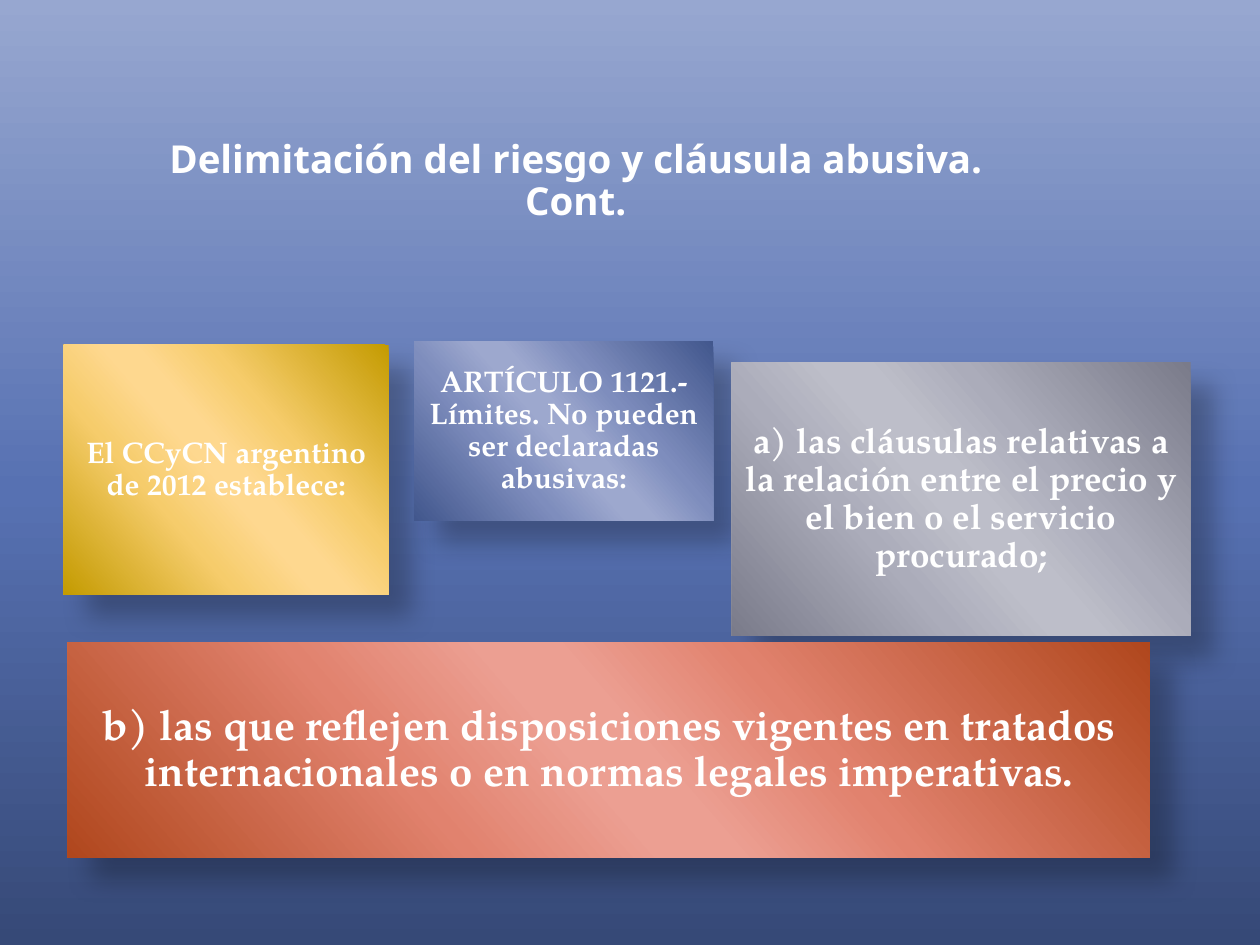
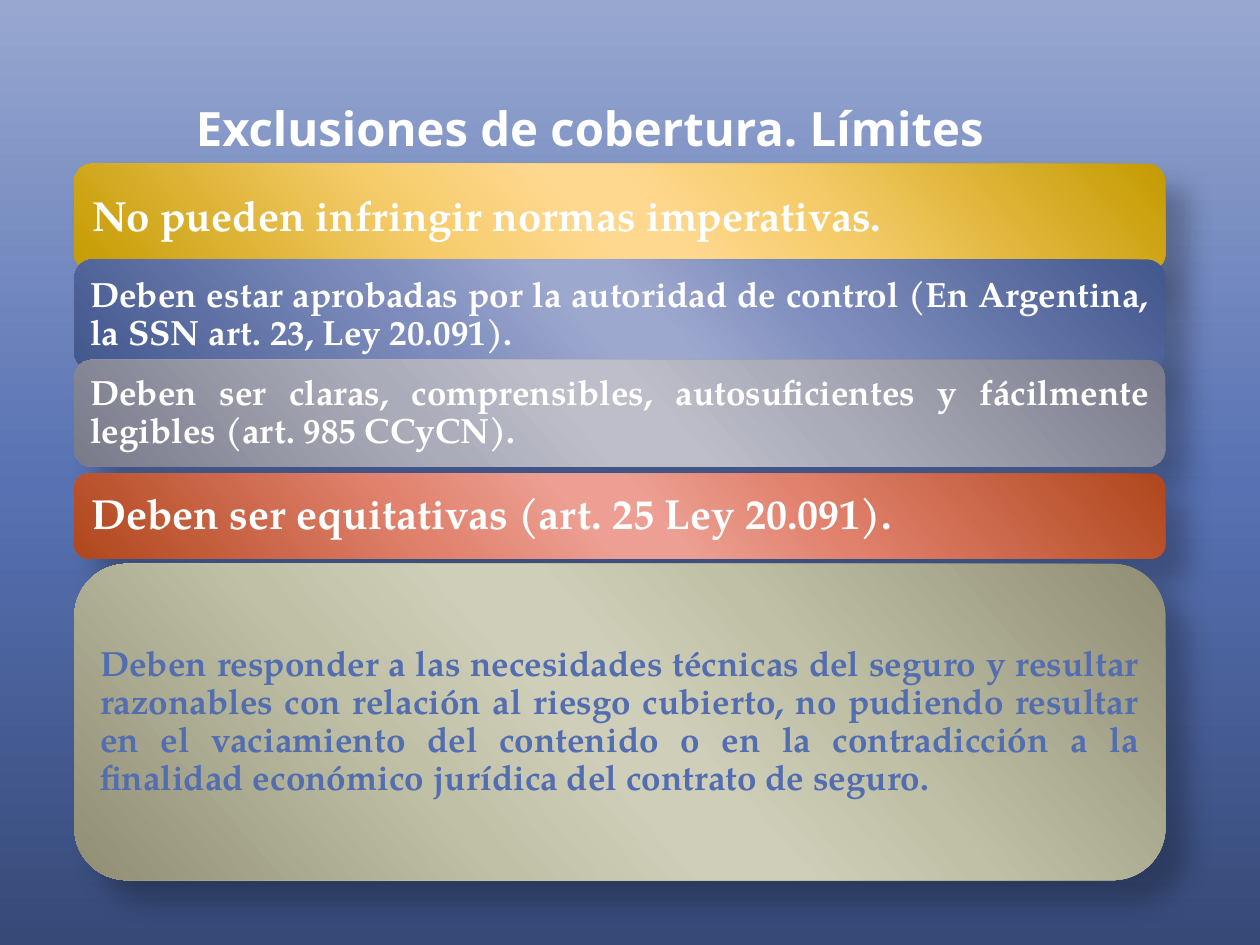
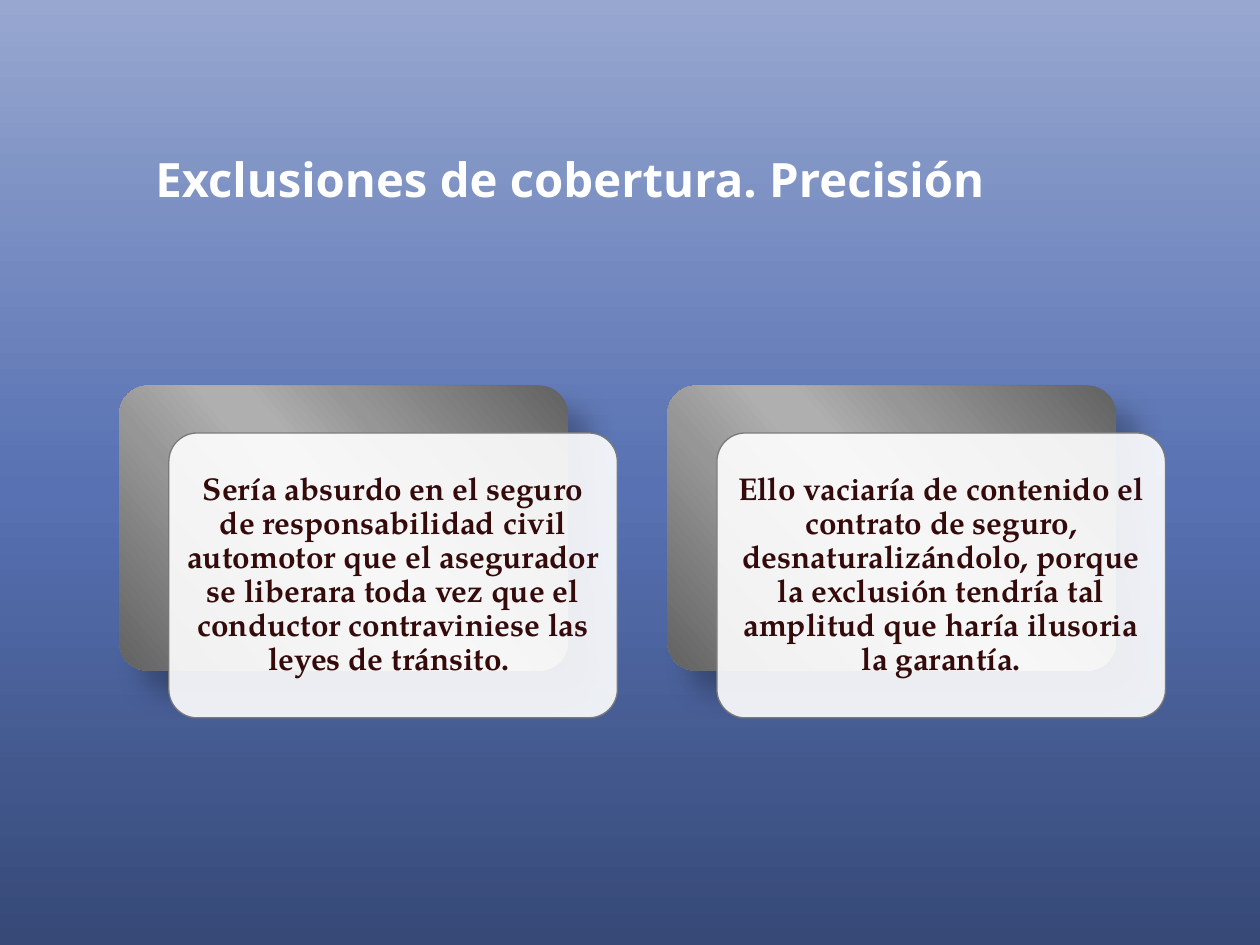
import pptx
import pptx.util
import pptx.dml.color
import pptx.enum.shapes
import pptx.enum.text
import pptx.oxml
import pptx.oxml.ns

Pt = pptx.util.Pt
qn = pptx.oxml.ns.qn
Kind = pptx.enum.shapes.MSO_SHAPE
Align = pptx.enum.text.PP_ALIGN

HEAD, BODY = "Noto Sans", "TeX Gyre Pagella"
WHITE, BLUE, WINE, EDGE = "FFFFFF", "526DB0", "340A0B", "7A7A7A"
SKY = [(0, "364977"), (48, "5771B2"), (100, "97A7D0")]
# Each sheen runs from a dark edge through a middle tone to a light centre
GOLD = ("C49B01", "F6CC6B", "FED88F")
NAVY = ("42578D", "7E8DBD", "9DA8CE")
STEEL = ("7A7B8A", "ABACBA", "BDBEC9")
RUST = ("B0471D", "E1826E", "EC9F92")
OLIVE = ("908F75", "C0C0A6", "CFCEB9")
GREY = ("626262", "969696", "AFAFAF")
TITLE = (68.4, 76.3, 521.3, 55.4)


def color(code):
    return pptx.dml.color.RGBColor.from_string(code)


def parse(tag, attrs="", inner=""):
    space = pptx.oxml.ns.nsdecls("a")
    return pptx.oxml.parse_xml(f"<a:{tag} {space} {attrs}>{inner}</a:{tag}>")


# Fills and shadow
def blend(fill, root, stops, angle):
    fill.gradient()
    fill.gradient_angle = 360 - angle
    marks = "".join(f'<a:gs pos="{pos * 1000}"><a:srgbClr val="{code}"/></a:gs>'
                    for pos, code in stops)
    old = root.find(".//" + qn("a:gsLst"))
    old.getparent().replace(old, parse("gsLst", inner=marks))


def sheen(shape, tones):
    dark, mid, light = tones
    stops = [(0, dark), (33, mid), (47, light), (53, light), (68, mid), (100, dark)]
    blend(shape.fill, shape.element.spPr, stops, 139)
    shape.line.fill.background()
    shape.element.spPr.append(parse("effectLst", inner=(
        f'<a:outerShdw blurRad="{Pt(15)}" dist="{Pt(18)}" dir="2700000" '
        'algn="tl" rotWithShape="0"><a:srgbClr val="000000">'
        '<a:alpha val="26000"/></a:srgbClr></a:outerShdw>')))


# Text
def write(shape, text, size, code, align, font=BODY, space=0.9):
    frame = shape.text_frame
    frame.word_wrap = True
    frame.auto_size = pptx.enum.text.MSO_AUTO_SIZE.NONE
    frame.vertical_anchor = pptx.enum.text.MSO_ANCHOR.MIDDLE
    frame.text = text
    para = frame.paragraphs[0]
    para.alignment, para.line_spacing = align, space
    para.font.name, para.font.size, para.font.bold = font, Pt(size), True
    para.font.color.rgb = color(code)
    return frame


def label(shape, text, size, code=WHITE, align=Align.CENTER):
    frame = write(shape, text, size, code, align)
    frame.margin_left = frame.margin_right = Pt(size * 0.3)
    frame.margin_top = frame.margin_bottom = Pt(size * 0.3)


# Shapes
def panel(slide, kind, box, tones, round=None):
    shape = slide.shapes.add_shape(kind, *map(Pt, box))
    if round:
        shape.adjustments[0] = round
    if tones:
        sheen(shape, tones)
    return shape


def glass(slide, box):
    shape = panel(slide, Kind.ROUNDED_RECTANGLE, box, None, 0.1)
    shape.shadow.inherit = False
    shape.fill.solid()
    shape.fill.fore_color.rgb = color(WHITE)
    tint = shape.element.spPr.find(qn("a:solidFill"))[0]
    tint.append(parse("alpha", 'val="90000"'))
    shape.line.color.rgb = color(EDGE)
    shape.line.width = Pt(0.75)
    return shape


# Slides
def start(deck, text, size, box=TITLE, space=0.9):
    slide = deck.slides.add_slide(deck.slide_layouts[5])
    title = slide.shapes.title
    title.left, title.top, title.width, title.height = map(Pt, box)
    write(title, text, size, WHITE, Align.CENTER, HEAD, space)
    return slide


def blocks(slide, items):
    for box, tones, size, text in items:
        label(panel(slide, Kind.RECTANGLE, box, tones), text, size)


def bars(slide, box, items):
    left, top, width = box
    for drop, height, tones, size, code, align, text in items:
        shape = panel(slide, Kind.ROUNDED_RECTANGLE,
                      (left, top + drop, width, height), tones)
        label(shape, text, size, code, align)


def cards(slide, box, step, texts):
    left, top, width, height = box
    for i, text in enumerate(texts):
        x = left + i * step
        panel(slide, Kind.ROUNDED_RECTANGLE, (x, top, width, height), GREY, 0.1)
        front = glass(slide, (x + 28.3, top + 27, width, height))
        label(front, text, 18, WINE)


def main():
    deck = pptx.Presentation()
    deck.slide_width, deck.slide_height = Pt(720), Pt(540)
    master = deck.slide_master
    blend(master.background.fill, master.element, SKY, 270)

    # Limits set by the civil code
    slide = start(deck, "Delimitación del riesgo y cláusula abusiva. Cont.", 22)
    blocks(slide, [
        ((36.6, 197, 185.5, 142.6), GOLD, 17,
         "El CCyCN argentino de 2012 establece:"),
        ((236.7, 195, 171, 102.5), NAVY, 17,
         "ARTÍCULO 1121.- Límites. No pueden ser declaradas abusivas:"),
        ((418.3, 207, 262.1, 156.4), STEEL, 20,
         "a) las cláusulas relativas a la relación entre el precio y el bien "
         "o el servicio procurado;"),
        ((38.6, 367, 618.5, 123), RUST, 24,
         "b) las que reflejen disposiciones vigentes en tratados "
         "internacionales o en normas legales imperativas."),
    ])

    # Limits of exclusions
    slide = start(deck, "Exclusiones de cobertura. Límites", 27,
                  (76.3, 45.4, 521.3, 55.4), 1.0)
    bars(slide, (42.5, 93.6, 623.5), [
        (0, 61.6, GOLD, 24, WHITE, Align.LEFT,
         "No pueden infringir normas imperativas."),
        (54.7, 63.4, NAVY, 20, WHITE, Align.JUSTIFY,
         "Deben estar aprobadas por la autoridad de control "
         "(En Argentina, la SSN art. 23, Ley 20.091)."),
        (112, 61.2, STEEL, 20, WHITE, Align.JUSTIFY,
         "Deben ser claras, comprensibles, autosuficientes y fácilmente "
         "legibles (art. 985 CCyCN)."),
        (177.1, 48.5, RUST, 24, WHITE, Align.LEFT,
         "Deben ser equitativas (art. 25 Ley 20.091)."),
        (228.6, 180.7, OLIVE, 20, BLUE, Align.JUSTIFY,
         "Deben responder a las necesidades técnicas del seguro y resultar "
         "razonables con relación al riesgo cubierto, no pudiendo resultar "
         "en el vaciamiento del contenido o en la contradicción a la "
         "finalidad económico jurídica del contrato de seguro."),
    ])

    # Precision of exclusions
    slide = start(deck, "Exclusiones de cobertura. Precisión ", 27)
    cards(slide, (68.2, 220.4, 256.3, 162.8), 313.2, [
        "Sería absurdo en el seguro de responsabilidad civil automotor que "
        "el asegurador se liberara toda vez que el conductor contraviniese "
        "las leyes de tránsito. ",
        "Ello vaciaría de contenido el contrato de seguro, "
        "desnaturalizándolo, porque la exclusión tendría tal amplitud que "
        "haría ilusoria la garantía.",
    ])
    deck.save("out.pptx")


if __name__ == "__main__":
    main()
